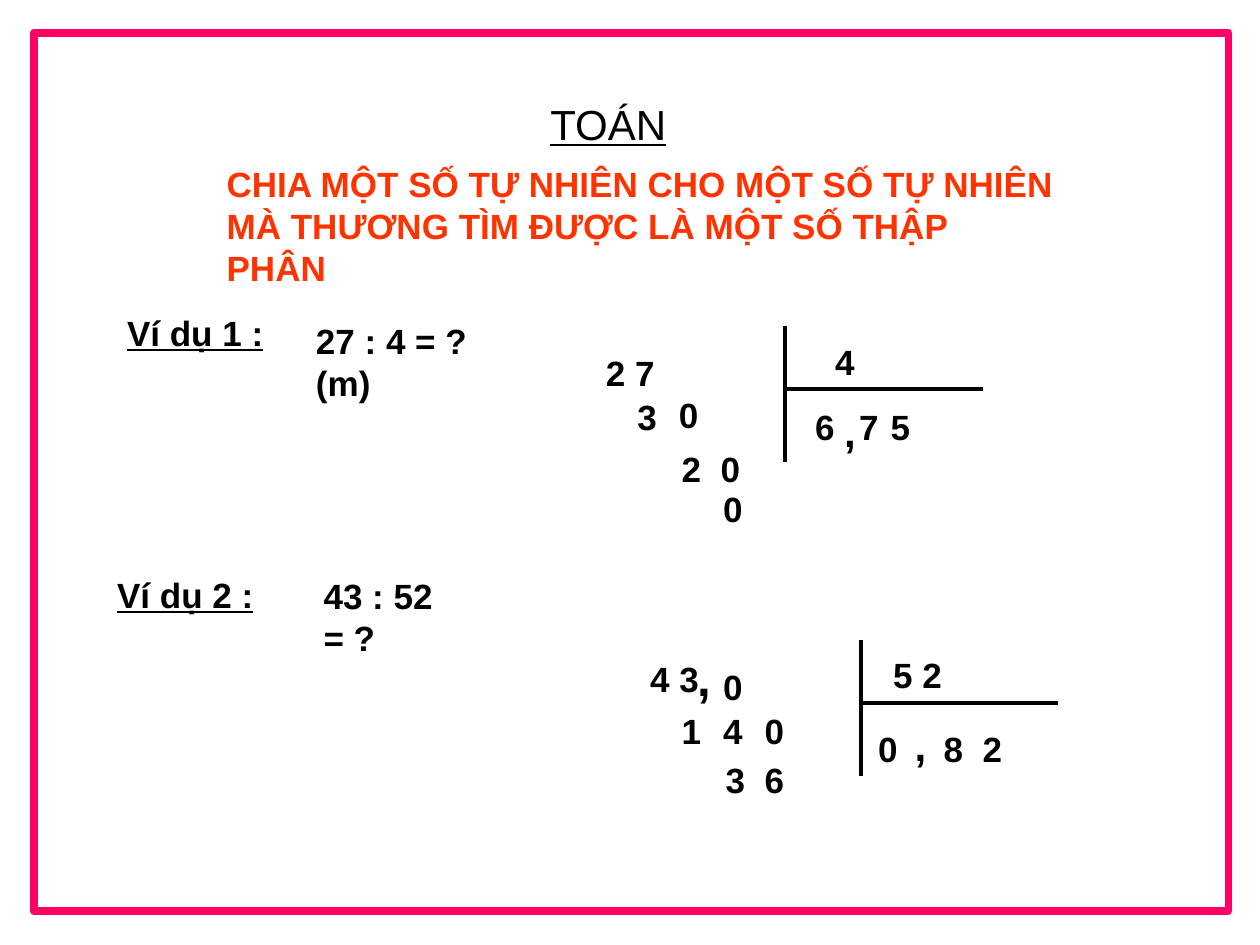
from lxml.etree import SubElement
from pptx import Presentation
from pptx.dml.color import RGBColor
from pptx.enum.shapes import MSO_CONNECTOR, MSO_SHAPE
from pptx.oxml.ns import qn
from pptx.util import Pt

BLACK = "000000"
TITLE_RED = "FF3300"
FRAME_PINK = "FF0066"
CHAR_WIDTHS = {20: 25.9, 24: 20.9, 28: 22.3}  # digits at 20, commas above
PAIR_WIDTH = 42.5
LINE_HEIGHTS = {20: 31, 24: 36, 28: 41}


def color(hex_string):
    return RGBColor.from_string(hex_string)


def add_text(slide, text, left, top, width, size=20, fill=BLACK,
             bold=True, underline=False, wrap=False):
    lines = text.split("\n")
    box = slide.shapes.add_textbox(Pt(left), Pt(top), Pt(width),
                                   Pt(LINE_HEIGHTS[size] * len(lines)))
    frame = box.text_frame
    frame.word_wrap = wrap
    frame.text = text
    for paragraph in frame.paragraphs:
        for run in paragraph.runs:
            run.font.name = "Arial"
            run.font.size = Pt(size)
            run.font.bold = bold
            run.font.underline = underline
            run.font.color.rgb = color(fill)


def add_rule(shapes, x1, y1, x2, y2):
    rule = shapes.add_connector(MSO_CONNECTOR.STRAIGHT, Pt(x1), Pt(y1), Pt(x2), Pt(y2))
    rule.line.color.rgb = color(BLACK)
    rule.line.width = Pt(2.25)
    SubElement(rule._element.spPr, qn("a:effectLst"))


def add_heading(slide, left, top):
    add_text(slide, "TOÁN", left + 185, top, 81.4, size=24, bold=False, underline=True)
    add_text(slide, "CHIA MỘT SỐ TỰ NHIÊN CHO MỘT SỐ TỰ NHIÊN\n"
             "MÀ THƯƠNG TÌM ĐƯỢC LÀ MỘT SỐ THẬP PHÂN",
             left, top + 36.7, 488.2, fill=TITLE_RED, wrap=True)


def add_example(slide, left, top, label, question, offset, width):
    """Place an underlined label and its question, offset to the right and down."""
    add_text(slide, label, left, top, 92.2, underline=True)
    add_text(slide, question, left + offset[0], top + offset[1], width, wrap=True)


def add_long_division(slide, left, top, rows):
    """Draw the division bars from their top corner and the figures around it.

    Each row is a top offset and its figures: text, left offset and,
    for the decimal commas, a font size.
    """
    bars = slide.shapes.add_group_shape().shapes
    add_rule(bars, left, top, left, top + 77.8)
    add_rule(bars, left, top + 36, left + 113, top + 36)
    for row_top, figures in rows:
        for text, x, *sizes in figures:
            size = sizes[0] if sizes else 20
            width = CHAR_WIDTHS[size] if len(text) == 1 else PAIR_WIDTH
            add_text(slide, text, left + x, top + row_top, width, size)


def add_frame(slide, left, top, width, height):
    frame = slide.shapes.add_shape(MSO_SHAPE.RECTANGLE, Pt(left), Pt(top),
                                   Pt(width), Pt(height))
    frame.shadow.inherit = False
    frame.fill.background()
    frame.line.color.rgb = color(FRAME_PINK)
    frame.line.width = Pt(4.5)


FIRST_DIVISION = [
    (4.3, [("4", 21.6)]),
    (10.8, [("2 7", -109.4)]),
    (34.6, [("0", -67.7)]),
    (36, [("3", -91.4)]),
    (41.8, [("6", 10.1), (",", 26.6, 24), ("7", 35.3), ("5", 53.3)]),
    (65.5, [("2", -66.2), ("0", -43.9)]),
    (88.6, [("0", -42.5)]),
]
SECOND_DIVISION = [
    (0.7, [(",", -100.1, 28)]),
    (4.3, [("5 2", 11.5)]),
    (6.5, [("4 3", -127.4)]),
    (10.8, [("0", -85.7)]),
    (36, [("1", -109.4), ("4", -85.7), ("0", -61.9)]),
    (41.8, [(",", 23.8, 24)]),
    (46.1, [("0", 2.9), ("8", 40.3), ("2", 62.6)]),
    (64.1, [("3", -84.2), ("6", -61.9)]),
]


def main():
    presentation = Presentation()
    presentation.slide_width, presentation.slide_height = Pt(720), Pt(540)
    slide = presentation.slides.add_slide(presentation.slide_layouts[6])
    add_heading(slide, 122.4, 52.6)
    add_example(slide, 65.5, 174.2, "Ví dụ 1 :", "27 : 4 = ? (m)", (108, 5), 136.8)
    add_long_division(slide, 448.6, 186.5, FIRST_DIVISION)
    add_example(slide, 59.8, 324, "Ví dụ 2 :", "43 : 52  = ?", (118, 0.7), 116.6)
    add_long_division(slide, 491.8, 365.8, SECOND_DIVISION)
    add_frame(slide, 19.4, 18.7, 682.6, 501.8)
    presentation.save("out.pptx")


if __name__ == "__main__":
    main()
